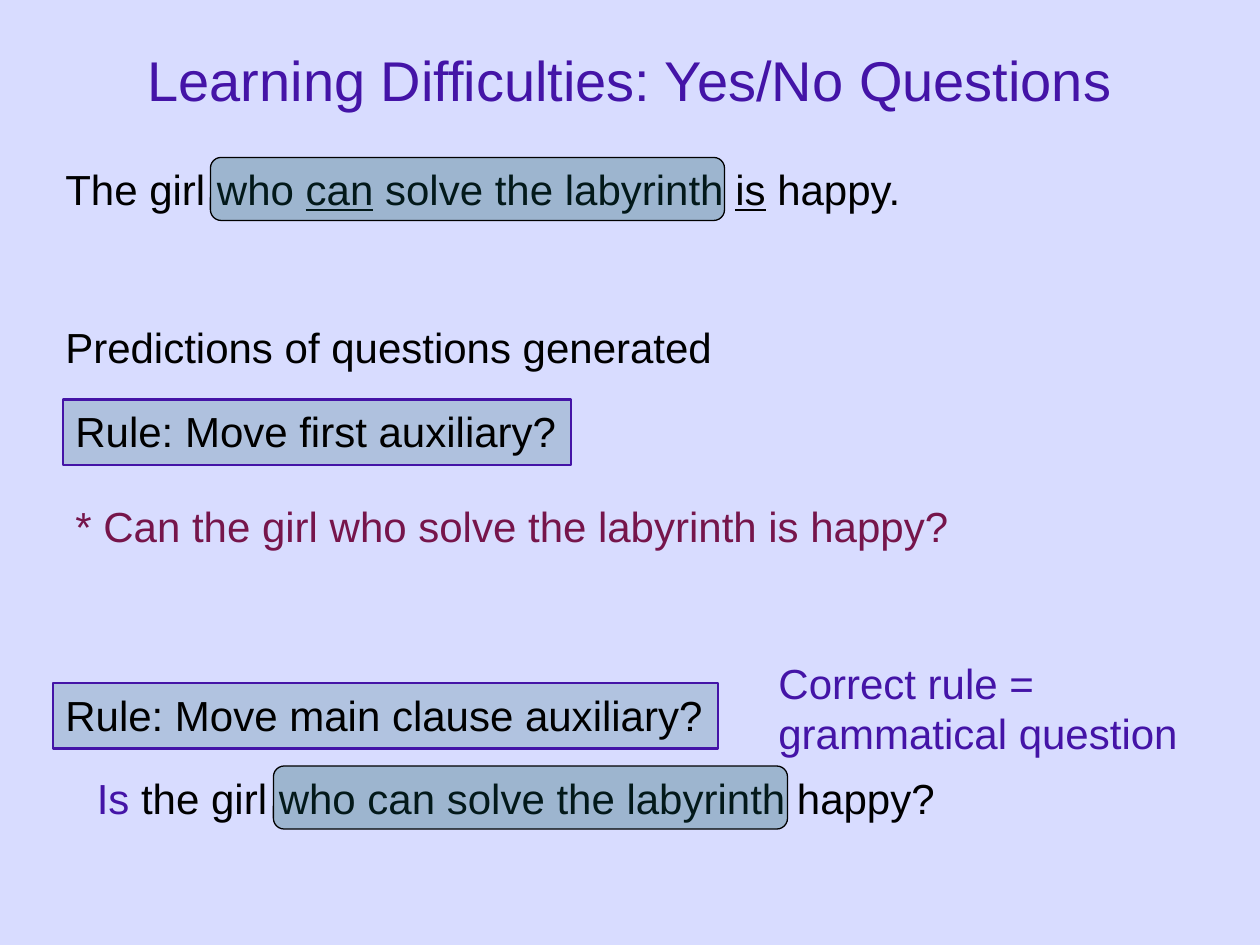
"""Build the slide on learning difficulties with yes/no questions."""
import pptx
import pptx.util
import pptx.dml.color
import pptx.enum.shapes
import pptx.enum.text
import pptx.oxml.ns
import lxml.etree

PX = 9144
HUES = {"back": "D8DCFF", "key": "4414A7", "text": "000000", "wrong": "76154B", "fill": "0D585D"}
KINDS = pptx.enum.shapes.MSO_SHAPE
ANCHOR = pptx.enum.text.MSO_ANCHOR


def hue(name):
    return pptx.dml.color.RGBColor.from_string(HUES[name])


def style(shape, alpha, line, width):
    shape.shadow.inherit = False
    shape.fill.solid()
    shape.fill.fore_color.rgb = hue("fill")
    tint = shape.fill._xPr.find(".//" + pptx.oxml.ns.qn("a:srgbClr"))
    lxml.etree.SubElement(tint, pptx.oxml.ns.qn("a:alpha"), val=str(alpha * 1000))
    shape.line.color.rgb = hue(line)
    shape.line.width = pptx.util.Pt(width)


deck = pptx.Presentation()
deck.slide_width, deck.slide_height = 1000 * PX, 750 * PX
slide = deck.slides.add_slide(deck.slide_layouts[5])
slide.background.fill.solid()
slide.background.fill.fore_color.rgb = hue("back")

title = slide.shapes.title
title.left, title.top, title.width, title.height = 0, 0, 1000 * PX, 125 * PX
title.text_frame.text = "Learning Difficulties: Yes/No Questions"
title.text_frame.vertical_anchor = ANCHOR.MIDDLE
head = title.text_frame.paragraphs[0]
head.alignment = pptx.enum.text.PP_ALIGN.CENTER
font = head.runs[0].font
font.size, font.name = pptx.util.Pt(32), "Arial"
font.color.rgb = hue("key")

rules = [
    (50, 317, 403, 20, "Rule: Move first auxiliary?"),
    (42, 542, 528, 19, "Rule: Move main clause auxiliary?"),
]
for left, top, width, alpha, words in rules:
    rule = slide.shapes.add_shape(KINDS.RECTANGLE, left * PX, top * PX, width * PX, 52 * PX)
    style(rule, alpha, "key", 1.25)
    frame = rule.text_frame
    frame.text = words
    frame.word_wrap = False
    frame.vertical_anchor = ANCHOR.TOP
    line = frame.paragraphs[0]
    line.alignment = pptx.enum.text.PP_ALIGN.LEFT
    font = line.runs[0].font
    font.size, font.name = pptx.util.Pt(24), "Arial"
    font.color.rgb = hue("text")

lines = [
    (42, 125, 933, 50, [("The girl who ", "text", False), ("can", "text", True),
                        (" solve the labyrinth ", "text", False), ("is", "text", True),
                        (" happy.", "text", False)]),
    (50, 392, 933, 50, [("* Can the girl who solve the labyrinth is happy?", "wrong", False)]),
    (42, 250, 933, 50, [("Predictions of questions generated", "text", False)]),
    (67, 608, 933, 50, [("Is", "key", False),
                        (" the girl who can solve the labyrinth happy?", "text", False)]),
    (608, 517, 367, 90, [("Correct rule = grammatical question", "key", False)]),
]
for left, top, width, height, parts in lines:
    box = slide.shapes.add_textbox(left * PX, top * PX, width * PX, height * PX)
    box.text_frame.word_wrap = True
    for words, color, under in parts:
        run = box.text_frame.paragraphs[0].add_run()
        run.text = words
        run.font.size, run.font.name = pptx.util.Pt(24), "Arial"
        run.font.color.rgb = hue(color)
        run.font.underline = under

for left, top in [(167, 125), (217, 608)]:
    clause = slide.shapes.add_shape(KINDS.ROUNDED_RECTANGLE, left * PX, top * PX, 408 * PX, 50 * PX)
    clause.adjustments[0] = 0.17
    style(clause, 29, "text", 0.75)

deck.save("out.pptx")
